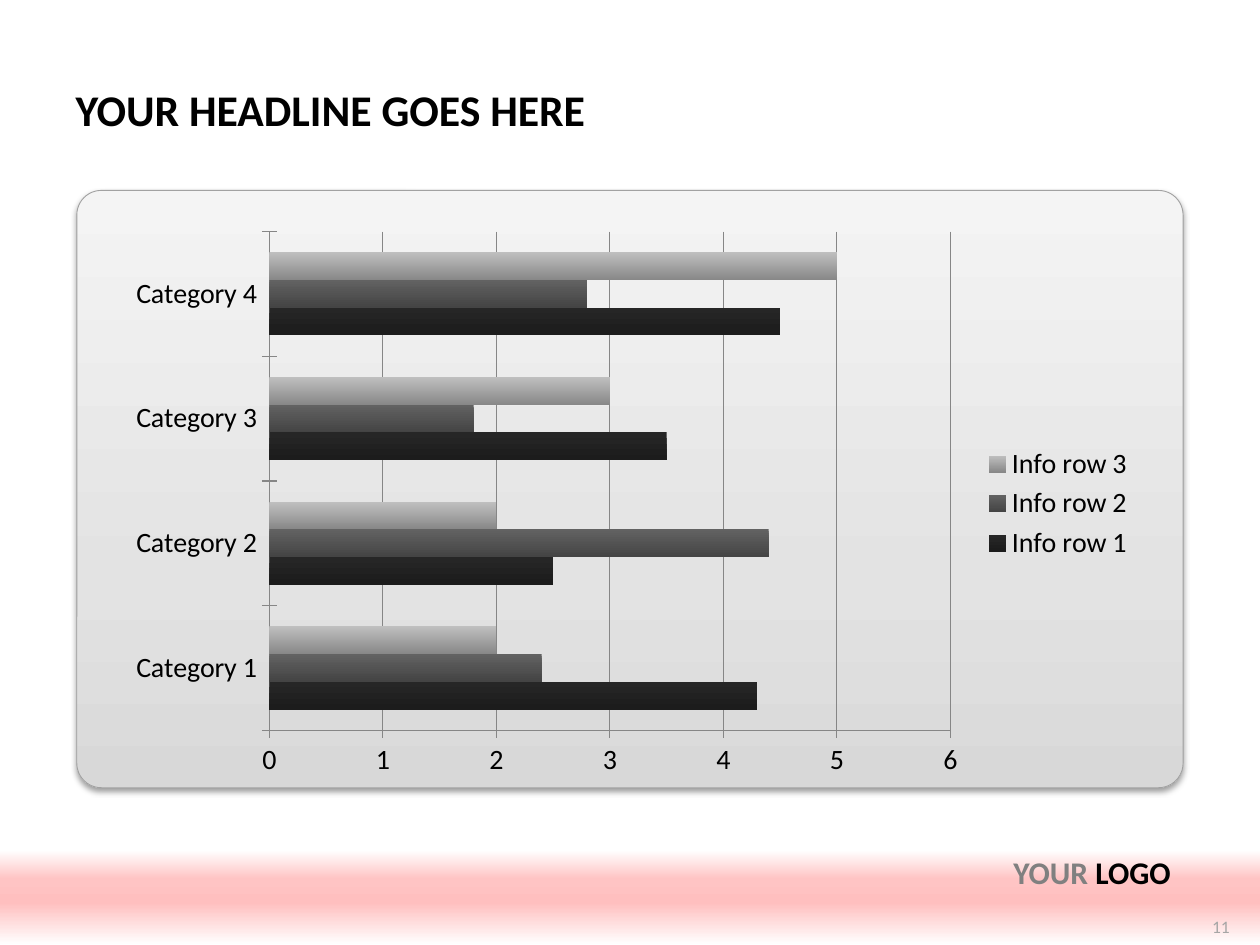
from lxml.etree import SubElement
from pptx import Presentation
from pptx.chart.data import CategoryChartData
from pptx.dml.color import RGBColor
from pptx.enum.chart import XL_CHART_TYPE, XL_LEGEND_POSITION, XL_TICK_MARK
from pptx.enum.shapes import MSO_SHAPE
from pptx.enum.text import MSO_ANCHOR, PP_ALIGN
from pptx.oxml import parse_xml
from pptx.oxml.ns import nsdecls, qn
from pptx.util import Cm, Pt

# Content
TITLE = "YOUR HEADLINE GOES HERE"
LOGO_TEXT = [("YOUR ", "808080"), ("LOGO", "000000")]
PAGE_NUMBER = [("11", "A6A6A6")]
CATEGORIES = ["Category 1", "Category 2", "Category 3", "Category 4"]
# name, values, gradient from the top of a bar to its bottom
SERIES = [
    ("Info row 1", (4.3, 2.5, 3.5, 4.5), [(0, "262626"), (100, "1C1C1C")]),
    ("Info row 2", (2.4, 4.4, 1.8, 2.8), [(0, "626262"), (100, "444444")]),
    ("Info row 3", (2, 2, 3, 5), [(0, "BFBFBF"), (100, "888888")]),
]
PANEL_STOPS = [(0, "F4F4F4"), (65, "E3E3E3"), (100, "D8D8D8")]
BAND_STOPS = [(0, "FFFFFF"), (30, "FFC4C4"), (55, "FFBFBF"), (100, "FFFFFF")]

# Places in cm: left, top, width, height
PANEL = (1.55, 3.84, 22.3, 12.04)
BAND = (0, 17.14, 25.4, 1.91)
TITLE_PLACE = (1.27, 1.5, 22.86, 1.4)
CHART = (2.31, 4.44, 20.8, 11.43)
LOGO = (1.27, 17.07, 22.58, 1.4)
NUMBER = (23.85, 18.29, 1.19, 0.76)
PLOT_AREA = {"x": 0.15, "y": 0.02, "w": 0.66, "h": 0.88}  # shares of the chart

FONT = "Calibri"
GRID_COLOR = "868686"


def color(hex_value):
    return RGBColor.from_string(hex_value)


def place(box):
    return [Cm(length) for length in box]


def set_font(font, size, hex_value, bold=False):
    font.name, font.size, font.bold = FONT, Pt(size), bold
    font.color.rgb = color(hex_value)


def set_gradient(fill, element, stops):
    """Fill from top to bottom with the given (percent, colour) stops."""
    fill.gradient()
    fill.gradient_angle = 270
    stop_list = next(element.iter(qn("a:gsLst")))
    for old_stop in list(stop_list):
        stop_list.remove(old_stop)
    for position, hex_value in stops:
        stop = SubElement(stop_list, qn("a:gs"), pos=str(position * 1000))
        SubElement(stop, qn("a:srgbClr"), val=hex_value)


def add_panel(page, kind, box, stops):
    panel = page.shapes.add_shape(kind, *place(box))
    panel.shadow.inherit = False
    panel.line.fill.background()
    set_gradient(panel.fill, panel._element, stops)
    return panel


def add_right_text(page, box, parts, size, bold, anchor):
    frame = page.shapes.add_textbox(*place(box)).text_frame
    frame.word_wrap = True
    frame.vertical_anchor = anchor
    para = frame.paragraphs[0]
    para.alignment = PP_ALIGN.RIGHT
    for text, hex_value in parts:
        span = para.add_run()
        span.text = text
        set_font(span.font, size, hex_value, bold)


def add_bar_chart(page):
    data = CategoryChartData()
    data.categories = CATEGORIES
    for name, values, _ in SERIES:
        data.add_series(name, values)
    chart = page.shapes.add_chart(XL_CHART_TYPE.BAR_CLUSTERED, *place(CHART), data).chart
    set_font(chart.font, 16, "000000")
    chart.has_title = False
    chart.has_legend = True
    chart.legend.position = XL_LEGEND_POSITION.RIGHT
    chart.legend.include_in_layout = False
    set_font(chart.legend.font, 16, "000000")

    # Bars
    plot = chart.plots[0]
    plot.vary_by_categories = False
    plot.gap_width = 150
    for series, (_, _, stops) in zip(plot.series, SERIES):
        series.invert_if_negative = False
        set_gradient(series.format.fill, series._element, stops)

    # Axes
    for axis in (chart.category_axis, chart.value_axis):
        axis.major_tick_mark = XL_TICK_MARK.CROSS
        axis.minor_tick_mark = XL_TICK_MARK.NONE
        set_font(axis.tick_labels.font, 16, "000000")
    scale = chart.value_axis
    scale.minimum_scale, scale.maximum_scale, scale.major_unit = 0, 6, 1
    scale.has_major_gridlines = True
    for line in (scale.format.line, chart.category_axis.format.line,
                 scale.major_gridlines.format.line):
        line.color.rgb = color(GRID_COLOR)
        line.width = Pt(0.75)

    # Fixed inner plot area
    plot_area = next(chart._chartSpace.iter(qn("c:plotArea")))
    for old_layout in plot_area.findall(qn("c:layout")):
        plot_area.remove(old_layout)
    layout = parse_xml(f"<c:layout {nsdecls('c')}/>")
    plot_area.insert(0, layout)
    manual = SubElement(layout, qn("c:manualLayout"))
    SubElement(manual, qn("c:layoutTarget"), val="inner")
    for side in "xy":
        SubElement(manual, qn(f"c:{side}Mode"), val="edge")
    for side, share in PLOT_AREA.items():
        SubElement(manual, qn(f"c:{side}"), val=str(share))


def main():
    deck = Presentation()
    deck.slide_width, deck.slide_height = Cm(25.4), Cm(19.05)
    page = deck.slides.add_slide(deck.slide_layouts[5])

    # Grey panel with a soft shadow, and the bottom band
    panel = add_panel(page, MSO_SHAPE.ROUNDED_RECTANGLE, PANEL, PANEL_STOPS)
    panel.adjustments[0] = 0.041
    panel.line.color.rgb = color("A1A1A1")
    panel.line.width = Pt(0.5)
    effects = next(panel._element.iter(qn("a:effectLst")))
    shadow = SubElement(effects, qn("a:outerShdw"), blurRad=str(Pt(3.5)),
                        dist=str(Pt(2)), dir="5400000", rotWithShape="0")
    shade = SubElement(shadow, qn("a:srgbClr"), val="000000")
    SubElement(shade, qn("a:alpha"), val="38000")
    add_panel(page, MSO_SHAPE.RECTANGLE, BAND, BAND_STOPS)

    # Title
    title = page.shapes.title
    title.left, title.top, title.width, title.height = place(TITLE_PLACE)
    title.text_frame.text = TITLE
    title.text_frame.vertical_anchor = MSO_ANCHOR.MIDDLE
    para = title.text_frame.paragraphs[0]
    para.alignment = PP_ALIGN.LEFT
    set_font(para.runs[0].font, 25, "000000", True)

    add_bar_chart(page)

    # Footer
    add_right_text(page, NUMBER, PAGE_NUMBER, 10, False, MSO_ANCHOR.MIDDLE)
    add_right_text(page, LOGO, LOGO_TEXT, 18, True, MSO_ANCHOR.TOP)
    deck.save("out.pptx")


if __name__ == "__main__":
    main()
